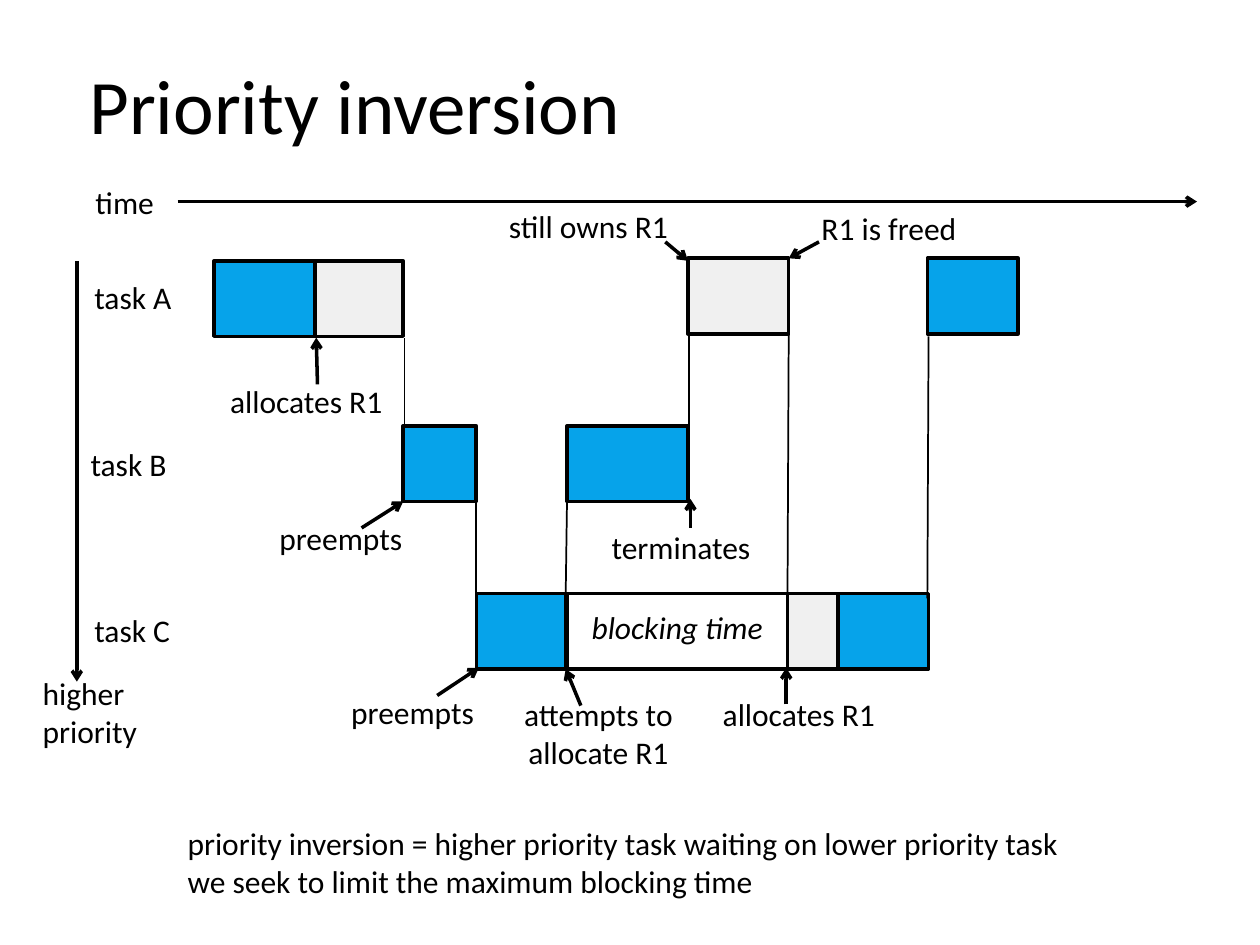
from lxml import etree
from pptx import Presentation
from pptx.dml.color import RGBColor
from pptx.enum import shapes, text
from pptx.oxml.ns import qn
from pptx.util import Pt

PX = 9144  # EMU per px, 100 px to the inch
FONT, BLACK, BLUE, GREY = "Calibri", "000000", "06A3EA", "D9D9D9"
BAR_H = 60
LEFT, CENTER = text.PP_ALIGN.LEFT, text.PP_ALIGN.CENTER

TITLE = ("Priority inversion", 61, 40, 446, 84)

# Bars: left, top, width, fill
BARS = [
    (546, 205, 80, GREY), (250, 207, 70, GREY),                        # task A
    (170, 207, 80, BLUE), (736, 205, 72, BLUE),
    (320, 338, 58, BLUE), (450, 338, 96, BLUE),                        # task B
    (378, 471, 72, BLUE), (449, 471, 176, None),                       # task C
    (625, 471, 40, GREY), (665, 471, 72, BLUE),
]

# Labels: lines, left, top, width
ROW_LABELS = [
    (["time"], 66, 140, 67),
    (["task A"], 65, 216, 82),
    (["task B"], 62, 348, 81),
    (["task C"], 65, 480, 81),
    (["higher", "priority"], 24, 530, 96),
    (["priority inversion = higher priority task waiting on lower priority task",
      "we seek to limit the maximum blocking time"], 139, 649, 719),
]
EVENT_LABELS = [
    (["allocates R1"], 172, 298, 142),
    (["preempts"], 211, 407, 119),
    (["still owns R1"], 393, 159, 148),
    (["R1 is freed"], 641, 161, 129),
    (["terminates"], 475, 414, 131),
    (["preempts"], 268, 545, 119),
    (["attempts to", "allocate R1"], 405, 547, 140),
    (["allocates R1"], 563, 547, 142),
]
BLOCKING_LABEL = (["blocking time"], 458, 478, 159)

# Lines: from x, from y, to x, to y
ARROWS = [
    (141, 160, 950, 160), (61, 207, 61, 541),                          # axes
    (252, 305, 251, 268), (287, 419, 320, 398), (461, 560, 449, 531),  # events
    (347, 552, 380, 530), (548, 419, 548, 396), (650, 192, 626, 205),
    (528, 192, 546, 207), (624, 559, 624, 530),
]
SWITCHES = [
    (321, 338, 321, 268), (378, 471, 378, 398), (449, 471, 450, 398),
    (547, 338, 547, 265), (625, 471, 626, 263), (736, 475, 737, 267),
]


def px(*values):
    return [v * PX for v in values]


def color(hex_string):
    return RGBColor.from_string(hex_string)


def write(sp, lines, size, align=LEFT, italic=False):
    tf = sp.text_frame
    tf.word_wrap = False
    tf.auto_size = text.MSO_AUTO_SIZE.NONE
    tf.text = "\n".join(lines)
    for p in tf.paragraphs:
        p.alignment = align
        p.font.name, p.font.size = FONT, Pt(size)
        p.font.italic = italic
        p.font.color.rgb = color(BLACK)


def add_bar(slide, left, top, width, fill):
    sp = slide.shapes.add_shape(shapes.MSO_SHAPE.RECTANGLE,
                                *px(left, top, width, BAR_H))
    sp.shadow.inherit = False
    sp.line.color.rgb, sp.line.width = color(BLACK), Pt(2)
    if fill is None:
        sp.fill.background()
        return
    sp.fill.solid()
    sp.fill.fore_color.rgb = color(fill)
    if fill == GREY:  # translucent
        rgb = sp.fill._xPr.find(qn("a:solidFill")).find(qn("a:srgbClr"))
        etree.SubElement(rgb, qn("a:alpha"), val="39000")


def add_label(slide, lines, left, top, width, align=LEFT, italic=False):
    height = 40 if len(lines) == 1 else 71
    sp = slide.shapes.add_textbox(*px(left, top, width, height))
    write(sp, lines, 18, align, italic)


def add_line(slide, ends, width, arrow=False):
    sp = slide.shapes.add_connector(shapes.MSO_CONNECTOR.STRAIGHT, *px(*ends))
    sp.line.color.rgb, sp.line.width = color(BLACK), Pt(width)
    if arrow:
        etree.SubElement(sp.line._get_or_add_ln(), qn("a:tailEnd"), type="arrow")
    etree.SubElement(sp._element.spPr, qn("a:effectLst"))


def main():
    prs = Presentation()
    prs.slide_width, prs.slide_height = px(1000, 750)
    slide = prs.slides.add_slide(prs.slide_layouts[5])

    # Title
    title = slide.shapes.title
    name, *box = TITLE
    title.left, title.top, title.width, title.height = px(*box)
    write(title, [name], 44)

    # Schedule
    for bar in BARS:
        add_bar(slide, *bar)
    for ends in SWITCHES:
        add_line(slide, ends, 1)
    for ends in ARROWS:
        add_line(slide, ends, 2, arrow=True)

    # Labels
    for label in ROW_LABELS:
        add_label(slide, *label)
    for label in EVENT_LABELS:
        add_label(slide, *label, align=CENTER)
    add_label(slide, *BLOCKING_LABEL, align=CENTER, italic=True)

    prs.save("out.pptx")


if __name__ == "__main__":
    main()
